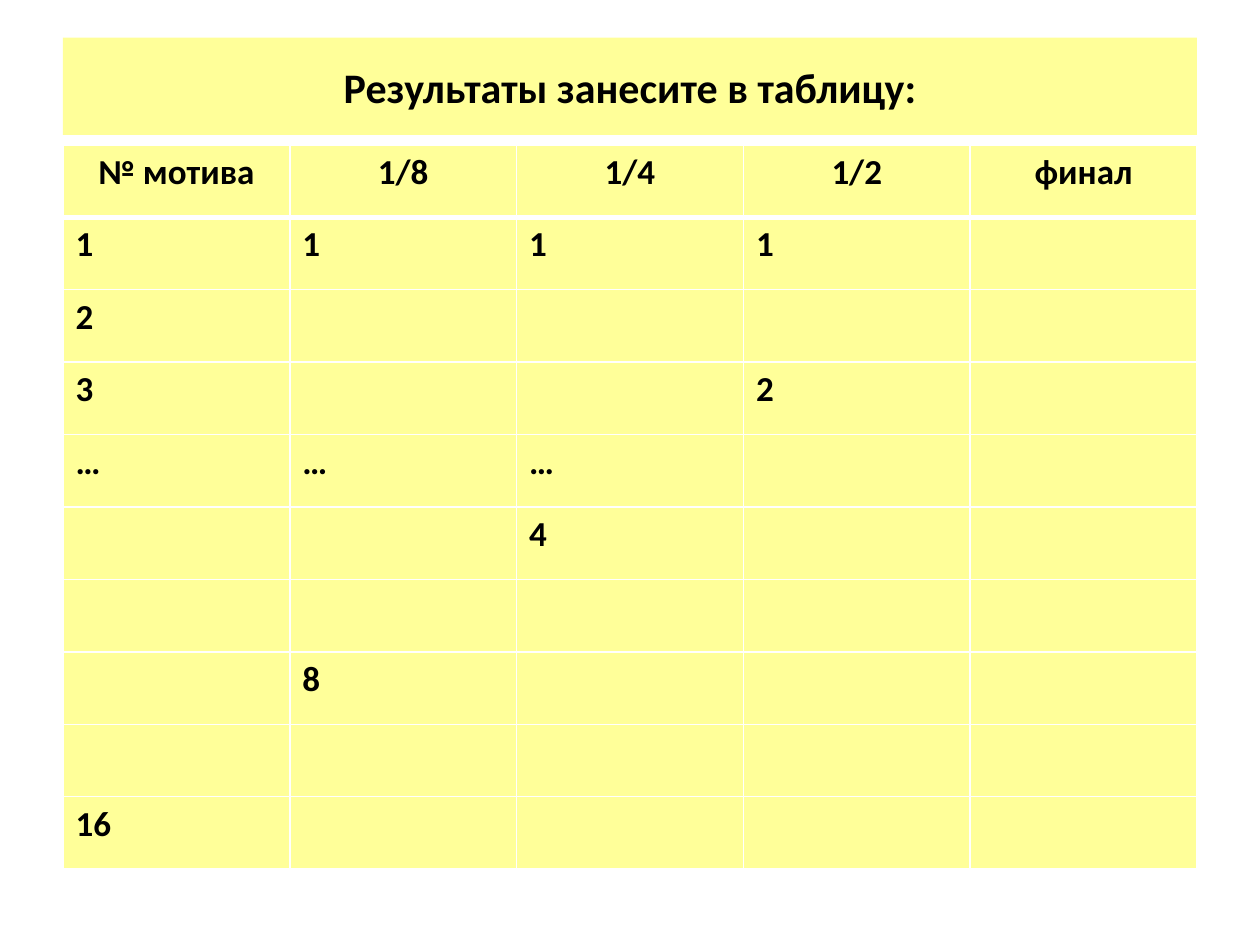
import pptx
import pptx.dml.color
import pptx.enum.shapes
import pptx.enum.text
import pptx.oxml
import pptx.oxml.ns
import pptx.util

Cm = pptx.util.Cm
Pt = pptx.util.Pt
ALIGN = pptx.enum.text.PP_ALIGN


def colour(value):
    return pptx.dml.color.RGBColor.from_string(value)


class ResultsSlide:
    font = "Calibri"
    ink = "000000"
    paper = "FFFF99"
    rule = "FFFFFF"

    def __init__(self, deck):
        self.slide = deck.slides.add_slide(deck.slide_layouts[6])

    def paint(self, target):
        target.fill.solid()
        target.fill.fore_color.rgb = colour(self.paper)

    def label(self, frame, text, size, align):
        frame.text = text
        paragraph = frame.paragraphs[0]
        paragraph.alignment = align
        for run in paragraph.runs:
            run.font.name = self.font
            run.font.size = Pt(size)
            run.font.bold = True
            run.font.color.rgb = colour(self.ink)

    def heading(self, text, left, top, width, height):
        banner = self.slide.shapes.add_shape(
            pptx.enum.shapes.MSO_SHAPE.RECTANGLE, left, top, width, height)
        banner.shadow.inherit = False
        banner.line.fill.background()
        self.paint(banner)
        banner.text_frame.word_wrap = True
        banner.text_frame.vertical_anchor = pptx.enum.text.MSO_ANCHOR.MIDDLE
        self.label(banner.text_frame, text, 24, ALIGN.CENTER)

    def border(self, cell, side, points):
        cell._tc.get_or_add_tcPr().append(pptx.oxml.parse_xml(
            f'<a:ln{side} {pptx.oxml.ns.nsdecls("a")} w="{Pt(points)}">'
            f'<a:solidFill><a:srgbClr val="{self.rule}"/></a:solidFill>'
            f'</a:ln{side}>'))

    def table(self, entries, left, top, width, height):
        results = self.slide.shapes.add_table(
            len(entries), len(entries[0]), left, top, width, height).table
        for row, texts in enumerate(entries):
            for column, text in enumerate(texts):
                cell = results.cell(row, column)
                for side in "LRTB":
                    under_header = (row, side) in ((0, "B"), (1, "T"))
                    self.border(cell, side, 3 if under_header else 1)
                self.paint(cell)
                align = ALIGN.JUSTIFY if row else ALIGN.CENTER
                self.label(cell.text_frame, text, 20, align)


def main():
    deck = pptx.Presentation()
    deck.slide_width, deck.slide_height = Cm(25.4), Cm(19.05)
    left, width = Cm(1.27), Cm(22.86)
    results = ResultsSlide(deck)
    results.heading("Результаты занесите в таблицу:", left, Cm(0.76), width, Cm(1.96))
    entries = [
        ("№ мотива", "1/8", "1/4", "1/2", "финал"),
        ("1", "1", "1", "1", ""),
        ("2", "", "", "", ""),
        ("3", "", "", "2", ""),
        ("…", "…", "…", "", ""),
        ("", "", "4", "", ""),
        ("", "", "", "", ""),
        ("", "8", "", "", ""),
        ("", "", "", "", ""),
        ("16", "", "", "", ""),
    ]
    results.table(entries, left, Cm(2.92), width, Cm(14.6))
    deck.save("out.pptx")


if __name__ == "__main__":
    main()
